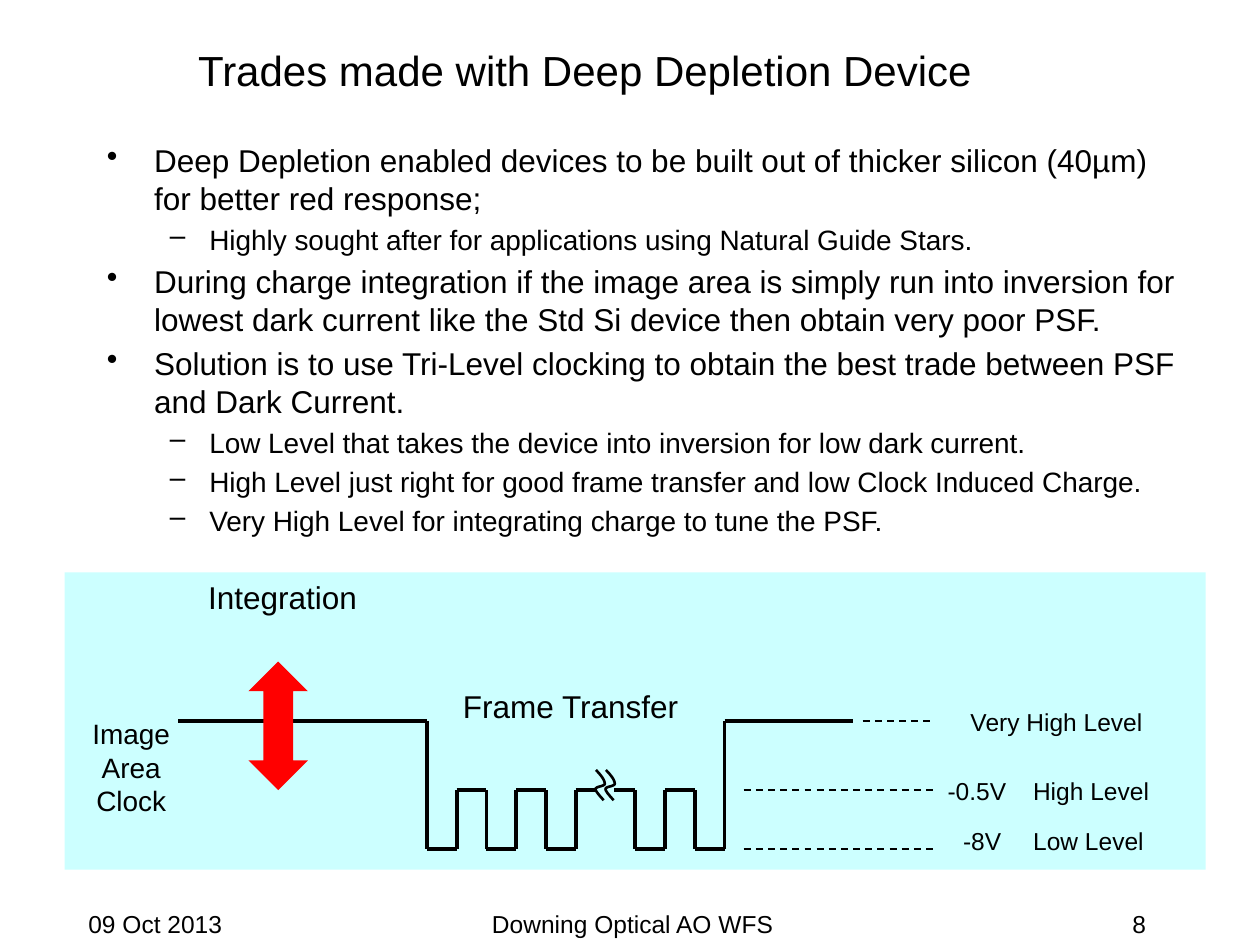
from dataclasses import dataclass
from lxml import etree
from pptx import Presentation
from pptx.dml.color import RGBColor
from pptx.enum import dml, shapes, text
from pptx.oxml import ns
from pptx.util import Pt


@dataclass(frozen=True)
class Theme:
    font: str = "Arial"
    ink: RGBColor = RGBColor(0, 0, 0)
    panel: RGBColor = RGBColor(0xCC, 0xFF, 0xFF)
    arrow: RGBColor = RGBColor(0xFF, 0, 0)
    title: int = 24
    body: int = 18
    sub: int = 16
    small: int = 14


THEME = Theme()
LEFT, CENTER, RIGHT = text.PP_ALIGN.LEFT, text.PP_ALIGN.CENTER, text.PP_ALIGN.RIGHT
VERY_HIGH, HIGH, LOW = 412, 451.5, 485
EDGES = [244 + 17 * i for i in range(11)]
BREAK_START, BREAK_END = 340, 351

BULLETS = [
    (0, "Deep Depletion enabled devices to be built out of thicker silicon (40µm) for better red response;"),
    (1, "Highly sought after for applications using Natural Guide Stars."),
    (0, "During charge integration if the image area is simply run into inversion for lowest dark current "
        "like the Std Si device then obtain very poor PSF."),
    (0, "Solution is to use Tri-Level clocking to obtain the best trade between PSF and Dark Current."),
    (1, "Low Level that takes the device into inversion for low dark current."),
    (1, "High Level just right for good frame transfer and low Clock Induced Charge."),
    (1, "Very High Level for integrating charge to tune the PSF."),
]

LABELS = [
    ("Integration", 105, 327, 113, 29, THEME.body),
    ("Frame Transfer", 255, 389, 142, 29, THEME.body),
    ("Image Area Clock", 31, 406, 88, 66, THEME.sub),
    ("Very High Level", 538.5, 400.5, 130.5, 24.5, THEME.small),
    ("-0.5V", 527, 440, 62.5, 24.5, THEME.small),
    ("High Level", 572.5, 440, 102, 24.5, THEME.small),
    ("-8V", 538.5, 468.5, 45.5, 24.5, THEME.small),
    ("Low Level", 578, 468.5, 88, 24.5, THEME.small),
]


def box(left, top, width, height):
    return Pt(left), Pt(top), Pt(width), Pt(height)


def style(p, size, align=LEFT):
    p.alignment = align
    p.font.name = THEME.font
    p.font.size = Pt(size)
    p.font.color.rgb = THEME.ink


def add_title(slide, content):
    sp = slide.shapes.title
    sp.left, sp.top, sp.width, sp.height = box(65, 15, 538.5, 50)
    tf = sp.text_frame
    tf.text = content
    tf.vertical_anchor = text.MSO_ANCHOR.MIDDLE
    style(tf.paragraphs[0], THEME.title, CENTER)


def add_text(slide, content, left, top, width, height, size, align=CENTER,
             anchor=text.MSO_ANCHOR.TOP):
    tf = slide.shapes.add_textbox(*box(left, top, width, height)).text_frame
    tf.word_wrap = True
    tf.vertical_anchor = anchor
    tf.text = content
    style(tf.paragraphs[0], size, align)
    return tf


def add_bullets(slide, items):
    levels = [("•", 27, -27, THEME.body), ("–", 58.5, -22.5, THEME.sub)]
    tf = slide.shapes.add_textbox(*box(54, 77, 629.5, 259)).text_frame
    tf.word_wrap = True
    for i, (level, content) in enumerate(items):
        p = tf.add_paragraph() if i else tf.paragraphs[0]
        mark, margin, indent, size = levels[level]
        p.text = content
        p.level = level
        p_pr = p._p.get_or_add_pPr()
        p_pr.set("marL", str(Pt(margin)))
        p_pr.set("indent", str(Pt(indent)))
        etree.SubElement(p_pr, ns.qn("a:buChar"), char=mark)
        p.space_before = Pt(0.2 * size if i else 0)
        style(p, size)


def add_filled(slide, kind, color, *frame):
    sp = slide.shapes.add_shape(kind, *box(*frame))
    sp.shadow.inherit = False
    sp.fill.solid()
    sp.fill.fore_color.rgb = color
    sp.line.fill.background()


def add_line(slide, x1, y1, x2, y2, width=2.25, dashed=False):
    line = slide.shapes.add_connector(
        shapes.MSO_CONNECTOR.STRAIGHT, Pt(x1), Pt(y1), Pt(x2), Pt(y2))
    line.line.color.rgb = THEME.ink
    line.line.width = Pt(width)
    if dashed:
        line.line.dash_style = dml.MSO_LINE.DASH
    etree.SubElement(line._element.spPr, ns.qn("a:effectLst"))


def bezier(points, steps=8):
    for i in range(1, steps + 1):
        t = i / steps
        weights = (1 - t) ** 3, 3 * t * (1 - t) ** 2, 3 * t * t * (1 - t), t ** 3
        yield tuple(Pt(sum(w * pt[axis] for w, pt in zip(weights, points))) for axis in (0, 1))


def add_break_mark(slide, left, top):
    offsets = [(0.5, 0), (3.4, 2.9), (5.6, 5.8), (5.6, 7.9), (5.6, 9.4),
               (0.6, 9.4), (0.3, 10.8), (0, 12.2), (5, 17.3), (5, 17.3)]
    pts = [(left + x, top + y) for x, y in offsets]
    builder = slide.shapes.build_freeform(Pt(pts[0][0]), Pt(pts[0][1]))
    for start in range(0, 9, 3):
        builder.add_line_segments(list(bezier(pts[start:start + 4])), close=False)
    sp = builder.convert_to_shape()
    sp.shadow.inherit = False
    sp.fill.background()
    sp.line.color.rgb = THEME.ink
    sp.line.width = Pt(1.5)


def add_waveform(slide):
    first, last = EDGES[0], EDGES[-1]
    add_line(slide, 102, VERY_HIGH, first, VERY_HIGH)
    add_line(slide, last, VERY_HIGH, 487.5, VERY_HIGH)
    for i, x in enumerate(EDGES):
        if i != 6:
            add_line(slide, x, VERY_HIGH if x in (first, last) else HIGH, x, LOW)
    for level, starts in ((LOW, (0, 2, 4, 7, 9)), (HIGH, (1, 3, 8))):
        for i in starts:
            add_line(slide, EDGES[i], level, EDGES[i + 1], level)
    add_line(slide, EDGES[5], HIGH, BREAK_START, HIGH)
    add_line(slide, BREAK_END, HIGH, EDGES[7], HIGH)
    for left in (BREAK_START, BREAK_START + 5.7):
        add_break_mark(slide, left, 440)
    for x, level in ((493, VERY_HIGH), (425, HIGH), (425, LOW)):
        add_line(slide, x, level, 533, level, 1, dashed=True)


def add_footer(slide):
    bottom = text.MSO_ANCHOR.BOTTOM
    date = add_text(slide, "09 Oct 2013", 50.5, 504, 150, 36, THEME.small, LEFT, bottom)
    date.margin_left = 0
    add_text(slide, "Downing Optical AO WFS", 247.5, 504, 228, 36, THEME.small, CENTER, bottom)
    add_text(slide, "8", 512, 504, 150, 36, THEME.small, RIGHT, bottom)


def main():
    prs = Presentation()
    prs.slide_width, prs.slide_height = Pt(720), Pt(540)
    slide = prs.slides.add_slide(prs.slide_layouts[5])
    add_title(slide, "Trades made with Deep Depletion Device")
    add_filled(slide, shapes.MSO_SHAPE.RECTANGLE, THEME.panel, 37, 327, 652, 170)
    add_bullets(slide, BULLETS)
    add_waveform(slide)
    add_filled(slide, shapes.MSO_SHAPE.UP_DOWN_ARROW, THEME.arrow, 142, 378, 34, 73.5)
    for label in LABELS:
        add_text(slide, *label)
    add_footer(slide)
    prs.save("out.pptx")


if __name__ == "__main__":
    main()
